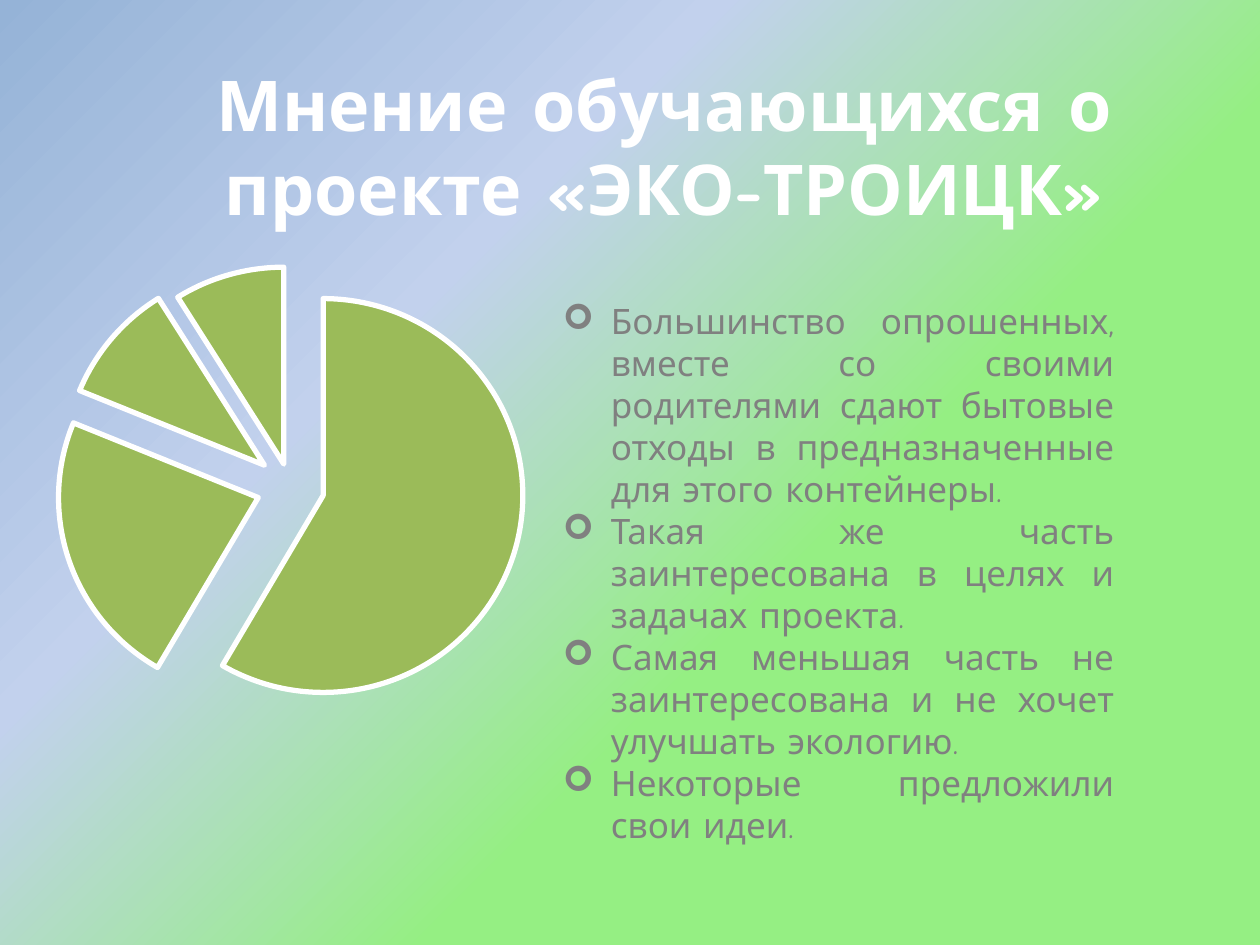
from lxml.etree import SubElement
from pptx import Presentation
from pptx.chart.data import CategoryChartData
from pptx.dml.color import RGBColor
from pptx.enum.chart import XL_CHART_TYPE as ChartType
from pptx.enum.text import MSO_ANCHOR as Anchor, MSO_AUTO_SIZE as AutoSize, PP_ALIGN as Align
from pptx.oxml import parse_xml
from pptx.oxml.ns import nsdecls, qn
from pptx.util import Inches, Pt

WHITE = RGBColor(0xFF, 0xFF, 0xFF)
GRAY = RGBColor(0x80, 0x80, 0x80)
OLIVE = RGBColor(0x9B, 0xBB, 0x59)
BLUE = RGBColor(0x95, 0xB3, 0xD7)
PALE_BLUE = RGBColor(0xC2, 0xD1, 0xED)
GREEN = RGBColor(0x95, 0xEF, 0x83)

TEXT_FONT = "Comic Neue"
TITLE = "Мнение обучающихся о проекте «ЭКО-ТРОИЦК»"
OPINIONS = [
    "Большинство опрошенных, вместе со своими родителями сдают бытовые отходы "
    "в предназначенные для этого контейнеры.",
    "Такая же часть заинтересована в целях и задачах проекта.",
    "Самая меньшая часть не заинтересована и не хочет улучшать экологию.",
    "Некоторые предложили свои идеи.",
]
SHARES = [59, 23, 10, 9]
EXPLOSIONS = [17, 17, 17, 12]


def set_background(slide, stops, angle):
    fill = slide.background.fill
    fill.gradient()
    fill.gradient_angle = angle
    stop_list = next(slide.background._cSld.iter(qn("a:gsLst")))
    stop_list.clear()
    for percent, color in stops:
        stop_list.append(parse_xml(
            f'<a:gs {nsdecls("a")} pos="{percent * 1000}"><a:srgbClr val="{color}"/></a:gs>'))


def place(shape, left, top, width, height):
    shape.left, shape.top = Inches(left), Inches(top)
    shape.width, shape.height = Inches(width), Inches(height)


def add_bullet(para, symbol, indent):
    props = para._p.get_or_add_pPr()
    props.set("marL", str(Inches(indent)))
    props.set("indent", str(-Inches(indent)))
    SubElement(props, qn("a:buFont"), typeface="Wingdings")
    SubElement(props, qn("a:buChar"), char=symbol)


def write_text(shape, texts, *, size, color, align, bold=False, bullet=None):
    frame = shape.text_frame
    frame.word_wrap = True
    frame.auto_size = AutoSize.NONE
    frame.vertical_anchor = Anchor.TOP
    for index, text in enumerate(texts):
        para = frame.add_paragraph() if index else frame.paragraphs[0]
        para.alignment = align
        para.space_before = Pt(0)
        if bullet:
            add_bullet(para, bullet, 0.38)
        span = para.add_run()
        span.text = text
        font = span.font
        font.name, font.size, font.bold = TEXT_FONT, Pt(size), bold
        font.color.rgb = color


def add_pie(slide, values, explosions, left, top, width, height):
    data = CategoryChartData()
    data.categories = [str(number + 1) for number in range(len(values))]
    data.add_series("Series 1", values)
    chart = slide.shapes.add_chart(
        ChartType.PIE, Inches(left), Inches(top), Inches(width), Inches(height), data).chart
    chart.has_legend = chart.has_title = False
    chart.font.name, chart.font.size = "Calibri", Pt(18)
    plot = chart.plots[0]
    plot.vary_by_categories = False
    for index, explosion in enumerate(explosions):
        point = plot.series[0].points[index]
        point.format.fill.solid()
        point.format.fill.fore_color.rgb = OLIVE
        point.format.line.color.rgb = WHITE
        point.format.line.width = Pt(3)
    # Pull the slices apart
    for node, explosion in zip(plot.series[0]._element.findall(qn("c:dPt")), explosions):
        node.find(qn("c:spPr")).addprevious(
            parse_xml(f'<c:explosion {nsdecls("c")} val="{explosion}"/>'))
    center_plot(chart, 3.17 / width, 3.17 / height)


def center_plot(chart, width, height):
    area = next(chart._chartSpace.iter(qn("c:plotArea")))
    for old in area.findall(qn("c:layout")):
        area.remove(old)
    layout = parse_xml(f'<c:layout {nsdecls("c")}><c:manualLayout/></c:layout>')
    settings = [("layoutTarget", "inner"), ("xMode", "edge"), ("yMode", "edge"),
                ("x", (1 - width) / 2), ("y", (1 - height) / 2), ("w", width), ("h", height)]
    for name, value in settings:
        SubElement(layout[0], qn(f"c:{name}"), val=str(value))
    area.insert(0, layout)


def main():
    deck = Presentation()
    deck.slide_width, deck.slide_height = Inches(10), Inches(7.5)
    slide = deck.slides.add_slide(deck.slide_layouts[5])
    set_background(slide, [(0, BLUE), (33, PALE_BLUE), (62, GREEN), (100, GREEN)], 315)

    # Heading
    title = slide.shapes.title
    place(title, 1.61, 0.44, 7.32, 1.45)
    write_text(title, [TITLE], size=40, color=WHITE, align=Align.CENTER, bold=True)

    # Survey shares
    add_pie(slide, SHARES, EXPLOSIONS, -0.35, 2.1, 5.31, 3.48)

    # Survey findings
    box = slide.shapes.add_textbox(Inches(4.37), Inches(2.33), Inches(4.57), Inches(4.48))
    write_text(box, OPINIONS, size=20, color=GRAY, align=Align.JUSTIFY, bullet="➢")

    deck.save("out.pptx")


if __name__ == "__main__":
    main()
